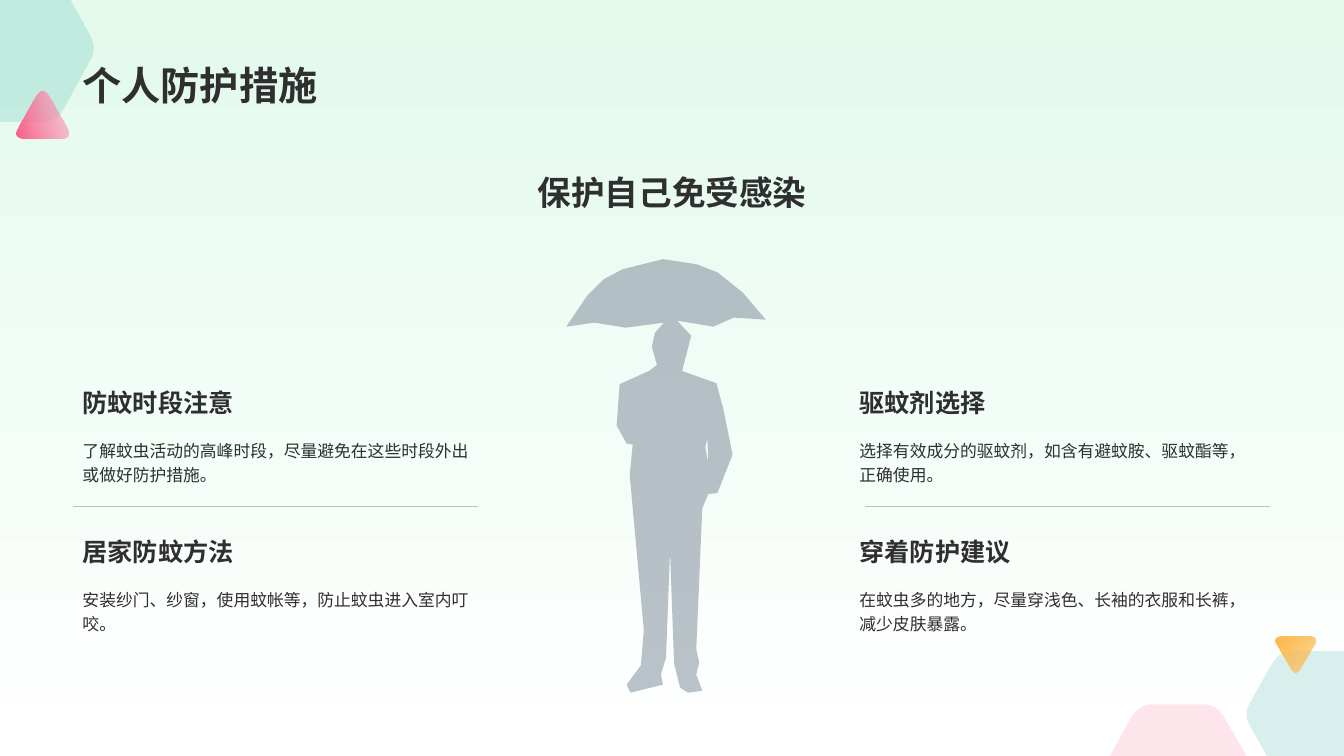
from dataclasses import dataclass

import pptx
import pptx.dml.color
import pptx.enum.shapes
import pptx.enum.text
import pptx.oxml
import pptx.oxml.ns
import pptx.util
from pptx.util import Cm

RGBColor = pptx.dml.color.RGBColor
Anchor = pptx.enum.text.MSO_ANCHOR
Align = pptx.enum.text.PP_ALIGN

MINT = RGBColor(0xE3, 0xFA, 0xED)
WHITE = RGBColor(0xFF, 0xFF, 0xFF)
TEAL = RGBColor(0x00, 0x9A, 0x8C)
PINK = RGBColor(0xFA, 0x57, 0x85)
PALE_PINK = RGBColor(0xFC, 0x9A, 0xB6)
ORANGE = RGBColor(0xFF, 0xB6, 0x44)
SLATE = RGBColor(0x77, 0x84, 0x95)
INK = RGBColor(0x2F, 0x2F, 0x2F)
RULE_GREY = RGBColor(0xBF, 0xBF, 0xBF)

FONT = "Arial"
CURVE_STEPS = 8
CORNER_CUT = 0.36
PAGE_WIDTH, PAGE_HEIGHT = 33.87, 19.05
FIGURE_HEIGHT = 431


@dataclass
class Corner:
    x: float
    y: float
    cut: float = 0


@dataclass
class Ornament:
    """One colour gives a plain fill, two give a gradient; opacity in percent."""
    corners: list[Corner]
    colours: list[RGBColor]
    opacities: list[int]
    angle: float = 0


@dataclass
class Measure:
    heading: str
    detail: str


def bend(x: float, y: float) -> Corner:
    return Corner(x, y, CORNER_CUT)


def triangle(x: float, base: float, side: float, rise: float, cut: float) -> list[Corner]:
    """Corners of a triangle on a level base centred at x; a negative rise points down."""
    return [Corner(x, base - rise, cut), Corner(x + side / 2, base, cut),
            Corner(x - side / 2, base, cut)]


ORNAMENTS = [
    Ornament([Corner(0, 0), Corner(1.78, 0), bend(2.45, 1.22), bend(1.42, 3.07),
              Corner(0, 3.07)], [TEAL], [15]),
    Ornament([bend(32.24, 16.41), Corner(PAGE_WIDTH, 16.41), Corner(PAGE_WIDTH, PAGE_HEIGHT),
              Corner(31.93, PAGE_HEIGHT), bend(31.33, 18)], [TEAL], [15]),
    Ornament(triangle(32.64, 16.05, 1.18, -1.01, 0.26), [ORANGE, ORANGE], [50, 100], 135),
    Ornament([Corner(27.97, PAGE_HEIGHT), bend(28.7, 17.75), bend(30.66, 17.75),
              Corner(31.42, PAGE_HEIGHT)], [PINK], [15]),
    Ornament(triangle(1.07, 3.5, 1.57, 1.38, CORNER_CUT), [PALE_PINK, PINK], [50, 96], 195),
]

COLUMNS = {
    1.83: [
        Measure("防蚊时段注意", "了解蚊虫活动的高峰时段，尽量避免在这些时段外出或做好防护措施。"),
        Measure("居家防蚊方法", "安装纱门、纱窗，使用蚊帐等，防止蚊虫进入室内叮咬。"),
    ],
    21.41: [
        Measure("驱蚊剂选择", "选择有效成分的驱蚊剂，如含有避蚊胺、驱蚊酯等，正确使用。"),
        Measure("穿着防护建议", "在蚊虫多的地方，尽量穿浅色、长袖的衣服和长裤，减少皮肤暴露。"),
    ],
}
FIRST_ROW, ROW_STEP = 9.35, 3.76

CANOPY = [(110, 61), (146, 67), (166, 58), (198, 60), (175, 33), (150, 13), (129, 5),
          (96, 0), (56, 10), (37, 20), (21, 36), (0, 67), (28, 63), (59, 68), (97, 63)]
LEFT_SIDE = [(88, 73), (85, 87), (90, 105), (82, 111), (53, 124), (50, 165), (60, 183),
             (66, 184), (63, 214), (77, 368), (74, 403), (60, 422), (64, 430), (96, 422)]
LEGS = [(94, 412), (99, 395), (103, 290), (107, 401), (113, 425), (121, 430)]
RIGHT_SIDE = [(135, 428), (129, 412), (132, 400), (129, 387), (135, 247), (141, 233),
              (150, 232), (165, 194), (156, 149), (149, 123), (115, 111), (124, 76)]
UMBRELLA_MAN = CANOPY + LEFT_SIDE + LEGS + RIGHT_SIDE
ARM_GAP = [(138, 187), (140, 178), (141, 202)]


def round_corners(corners: list[Corner]) -> list[tuple[float, float]]:
    """Outline points in hundredths of a centimetre, each corner cut by a quadratic curve."""
    points = []
    for index, corner in enumerate(corners):
        if not corner.cut:
            points.append((corner.x * 100, corner.y * 100))
            continue
        ends = []
        for other in (corners[index - 1], corners[(index + 1) % len(corners)]):
            dx, dy = other.x - corner.x, other.y - corner.y
            share = corner.cut / (dx * dx + dy * dy) ** 0.5
            ends.append((dx * share, dy * share))
        (ax, ay), (bx, by) = ends
        for step in range(CURVE_STEPS + 1):
            t = step / CURVE_STEPS
            points.append(((corner.x + ax * (1 - t) ** 2 + bx * t * t) * 100,
                           (corner.y + ay * (1 - t) ** 2 + by * t * t) * 100))
    return points


def add_outline(page, contours, scale: float, left: float, top: float,
                colours: list[RGBColor], opacities: list[int], angle: float = 0) -> None:
    builder = page.shapes.build_freeform(*contours[0][0], scale=scale)
    builder.add_line_segments(contours[0][1:])
    for contour in contours[1:]:
        builder.move_to(*contour[0])
        builder.add_line_segments(contour[1:])
    shape = builder.convert_to_shape(Cm(left), Cm(top))
    shape.shadow.inherit = False
    shape.line.fill.background()
    if len(colours) == 1:
        shape.fill.solid()
        shape.fill.fore_color.rgb = colours[0]
    else:
        set_gradient(shape.fill, colours, angle)
    tones = shape._element.spPr.iter(pptx.oxml.ns.qn("a:srgbClr"))
    for tone, opacity in zip(tones, opacities):
        namespace = pptx.oxml.ns.nsdecls("a")
        tone.append(pptx.oxml.parse_xml(f'<a:alpha {namespace} val="{opacity * 1000}"/>'))


def set_gradient(fill, colours: list[RGBColor], angle: float) -> None:
    fill.gradient()
    fill.gradient_angle = angle
    for stop, colour in zip(fill.gradient_stops, colours):
        stop.color.rgb = colour


def add_text(page, left: float, top: float, width: float, height: float, text: str,
             size: float, bold: bool = True, anchor=Anchor.BOTTOM,
             align=Align.LEFT, spacing: float = 1) -> None:
    box = page.shapes.add_textbox(Cm(left), Cm(top), Cm(width), Cm(height))
    frame = box.text_frame
    frame.word_wrap = True
    frame.vertical_anchor = anchor
    para = frame.paragraphs[0]
    para.text = text
    para.alignment = align
    para.line_spacing = spacing
    para.font.name = FONT
    para.font.size = pptx.util.Pt(size)
    para.font.bold = bold
    para.font.color.rgb = INK


def add_rule(page, left: float, top: float, width: float) -> None:
    rule = page.shapes.add_connector(pptx.enum.shapes.MSO_CONNECTOR.STRAIGHT,
                                     Cm(left), Cm(top), Cm(left + width), Cm(top))
    rule.line.color.rgb = RULE_GREY
    rule.line.width = pptx.util.Pt(0.25)
    rule._element.spPr.append(pptx.oxml.parse_xml(
        f'<a:effectLst {pptx.oxml.ns.nsdecls("a")}/>'))


def main() -> None:
    deck = pptx.Presentation()
    deck.slide_width, deck.slide_height = Cm(PAGE_WIDTH), Cm(PAGE_HEIGHT)
    page = deck.slides.add_slide(deck.slide_layouts[6])
    set_gradient(page.background.fill, [MINT, WHITE], 270)

    for ornament in ORNAMENTS:
        add_outline(page, [round_corners(ornament.corners)], Cm(0.01), 0, 0,
                    ornament.colours, ornament.opacities, ornament.angle)
    add_text(page, 1.83, 0.36, 30.18, 2.49, "个人防护措施", 28)
    for left in (1.83, 21.79):
        add_rule(page, left, 12.75, 10.21)
    add_outline(page, [UMBRELLA_MAN, ARM_GAP], Cm(10.95) / FIGURE_HEIGHT, 14.27, 6.53,
                [SLATE], [50])
    add_text(page, 1.88, 3.15, 30.12, 3.38, "保护自己免受感染", 24,
             anchor=Anchor.MIDDLE, align=Align.CENTER)
    for left, measures in COLUMNS.items():
        for row, measure in enumerate(measures):
            top = FIRST_ROW + row * ROW_STEP
            add_text(page, left, top, 10.57, 1.3, measure.heading, 18)
            add_text(page, left, top + 1.52, 10.57, 2.24, measure.detail, 12,
                     bold=False, anchor=Anchor.TOP, spacing=1.2)
    deck.save("out.pptx")


if __name__ == "__main__":
    main()
